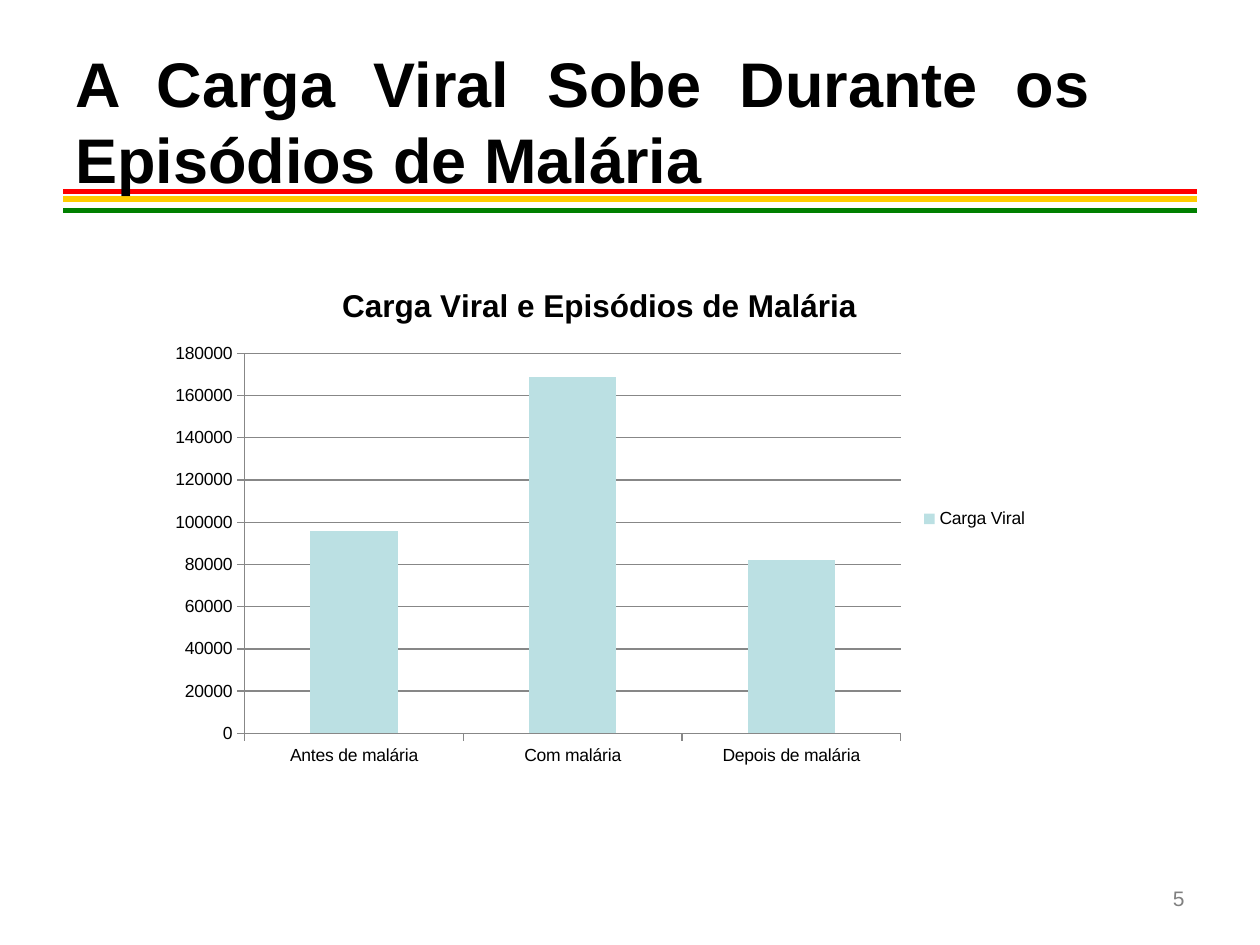
from lxml import etree
from pptx import Presentation
from pptx.chart.data import CategoryChartData
from pptx.dml.color import RGBColor
from pptx.enum.chart import XL_CHART_TYPE, XL_LEGEND_POSITION, XL_TICK_MARK
from pptx.enum.shapes import MSO_CONNECTOR
from pptx.enum.text import MSO_ANCHOR, PP_ALIGN
from pptx.oxml.ns import qn
from pptx.util import Cm, Pt

COLUMN = XL_CHART_TYPE.COLUMN_CLUSTERED
RIGHT = XL_LEGEND_POSITION.RIGHT
OUT = XL_TICK_MARK.OUTSIDE
LINE = MSO_CONNECTOR.STRAIGHT
TOP, MIDDLE = MSO_ANCHOR.TOP, MSO_ANCHOR.MIDDLE

BLACK = RGBColor(0x00, 0x00, 0x00)
GRAY = RGBColor(0x80, 0x80, 0x80)
AXIS = RGBColor(0x87, 0x87, 0x87)
RED = RGBColor(0xFF, 0x00, 0x00)
YELLOW = RGBColor(0xFF, 0xCC, 0x00)
GREEN = RGBColor(0x00, 0x80, 0x00)
TEAL = RGBColor(0xBB, 0xE0, 0xE3)
FONT = "Arial"

# Content
TITLE = "A Carga Viral Sobe Durante os Episódios de Malária"
NUMBER = "5"
HEAD = "Carga Viral e Episódios de Malária"
SERIES = "Carga Viral"
LOADS = {"Antes de malária": 96000, "Com malária": 169000, "Depois de malária": 82000}
STRIPES = [(YELLOW, 4.01), (RED, 3.86), (GREEN, 4.24)]
LEFT, END = 1.27, 24.13


def style(font, size, color=BLACK, bold=False):
    font.name, font.size, font.bold = FONT, Pt(size), bold
    font.color.rgb = color


def add_text(slide, text, place, align, anchor, size, color, bold=False):
    frame = slide.shapes.add_textbox(*map(Cm, place)).text_frame
    frame.word_wrap = True
    frame.vertical_anchor = anchor
    frame.text = text
    para = frame.paragraphs[0]
    para.alignment = align
    style(para.runs[0].font, size, color, bold)


def add_stripe(slide, color, y):
    stripe = slide.shapes.add_connector(LINE, Cm(LEFT), Cm(y), Cm(END), Cm(y))
    stripe.line.color.rgb = color
    stripe.line.width = Pt(3)
    props = stripe.element.find(qn("p:spPr"))
    etree.SubElement(props, qn("a:effectLst"))


def add_graph(slide):
    data = CategoryChartData()
    data.categories = list(LOADS)
    data.add_series(SERIES, list(LOADS.values()))
    place = map(Cm, (3.18, 5.28, 17.81, 10.36))
    chart = slide.shapes.add_chart(COLUMN, *place, data).chart
    style(chart.font, 10)

    # Title and legend
    chart.has_title = True
    frame = chart.chart_title.text_frame
    frame.text = HEAD
    style(frame.paragraphs[0].runs[0].font, 18, bold=True)
    chart.has_legend = True
    chart.legend.position = RIGHT
    chart.legend.include_in_layout = False

    # Columns
    plot = chart.plots[0]
    plot.vary_by_categories = False
    plot.gap_width = 150
    fill = plot.series[0].format.fill
    fill.solid()
    fill.fore_color.rgb = TEAL

    # Axes
    scale = chart.value_axis
    scale.minimum_scale, scale.maximum_scale, scale.major_unit = 0, 180000, 20000
    scale.has_major_gridlines = True
    for axis in (scale, chart.category_axis):
        axis.major_tick_mark = OUT
    for part in (scale, chart.category_axis, scale.major_gridlines):
        part.format.line.color.rgb = AXIS
        part.format.line.width = Pt(0.75)


def main():
    deck = Presentation()
    deck.slide_width, deck.slide_height = Cm(25.4), Cm(19.05)
    slide = deck.slides.add_slide(deck.slide_layouts[6])
    for color, y in STRIPES:
        add_stripe(slide, color, y)
    add_text(slide, NUMBER, (21.16, 17.73, 2.97, 1.32), PP_ALIGN.RIGHT, TOP, 12, GRAY)
    add_text(slide, TITLE, (LEFT, 0.84, 20.96, 3.18), PP_ALIGN.JUSTIFY, MIDDLE, 36, BLACK, True)
    add_graph(slide)
    deck.save("out.pptx")


if __name__ == "__main__":
    main()
